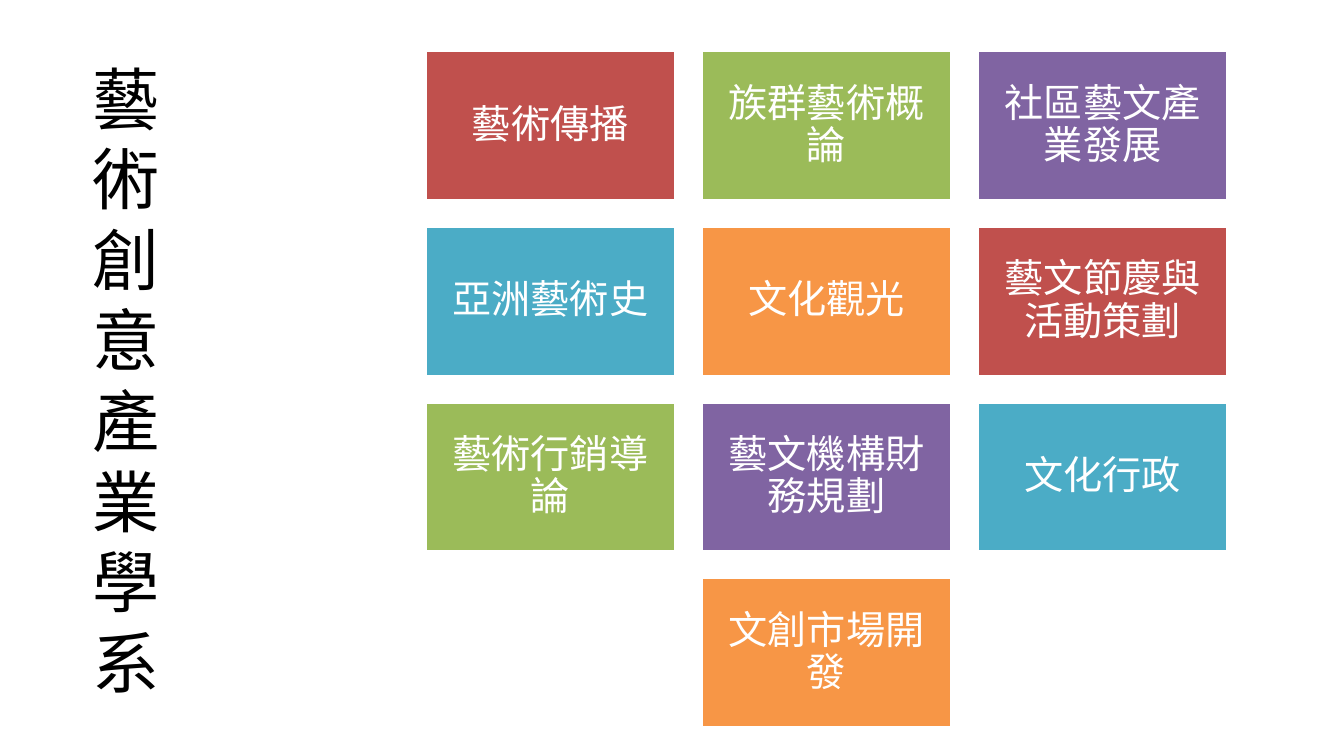
from pptx import Presentation
from pptx.dml.color import RGBColor
from pptx.enum.shapes import MSO_SHAPE
from pptx.enum.text import MSO_ANCHOR, PP_ALIGN
from pptx.util import Pt

COLORS = {
    "red": "C0504D",
    "green": "9BBB59",
    "purple": "8064A2",
    "teal": "4BACC6",
    "orange": "F79646",
    "white": "FFFFFF",
    "black": "000000",
}
TILE_COLORS = ["red", "green", "purple", "teal", "orange"]
DEPARTMENT = "藝術創意產業學系"
COURSES = [
    "藝術傳播", "族群藝術概論", "社區藝文產業發展",
    "亞洲藝術史", "文化觀光", "藝文節慶與活動策劃",
    "藝術行銷導論", "藝文機構財務規劃", "文化行政",
    "文創市場開發",
]
COLUMNS = 3


def rgb(name):
    return RGBColor.from_string(COLORS[name])


def write(frame, text, *, size, font, color, align=PP_ALIGN.LEFT,
          anchor=MSO_ANCHOR.TOP, spacing=1.0, inset_x=7.2, inset_y=3.6):
    frame.word_wrap = True
    frame.vertical_anchor = anchor
    frame.margin_left = frame.margin_right = Pt(inset_x)
    frame.margin_top = frame.margin_bottom = Pt(inset_y)
    para = frame.paragraphs[0]
    para.text = text
    para.alignment = align
    para.line_spacing = spacing
    for span in para.runs:
        span.font.size = Pt(size)
        span.font.name = font
        span.font.color.rgb = rgb(color)


def add_vertical_title(page, left, top, width, height):
    """Stack the department name, one character to a line."""
    box = page.shapes.add_textbox(Pt(left), Pt(top), Pt(width), Pt(height))
    write(box.text_frame, "\v".join(DEPARTMENT),
          size=36, font="TeX Gyre Bonum", color="black")


def add_tile(page, text, color, left, top, width, height):
    tile = page.shapes.add_shape(
        MSO_SHAPE.RECTANGLE, Pt(left), Pt(top), Pt(width), Pt(height))
    tile.shadow.inherit = False
    tile.fill.solid()
    tile.fill.fore_color.rgb = rgb(color)
    tile.line.color.rgb = rgb("white")
    tile.line.width = Pt(2)
    write(tile.text_frame, text, size=21, font="Calibri", color="white",
          align=PP_ALIGN.CENTER, anchor=MSO_ANCHOR.MIDDLE, spacing=0.9,
          inset_x=6.3, inset_y=6.3)


def add_course_grid(page, left, top, width):
    """Fill rows of tiles, centring a last row that is not full."""
    tile_width = width / (COLUMNS + 0.1 * (COLUMNS - 1))
    tile_height = 0.6 * tile_width
    gap = 0.1 * tile_width
    for index, course in enumerate(COURSES):
        row, column = divmod(index, COLUMNS)
        in_row = min(COLUMNS, len(COURSES) - row * COLUMNS)
        column += (COLUMNS - in_row) / 2
        add_tile(page, course, TILE_COLORS[index % len(TILE_COLORS)],
                 left + column * (tile_width + gap),
                 top + row * (tile_height + gap), tile_width, tile_height)


def main():
    deck = Presentation()
    deck.slide_width, deck.slide_height = Pt(720), Pt(405)
    page = deck.slides.add_slide(deck.slide_layouts[6])
    add_vertical_title(page, 42.5, 26.9, 67.7, 361.4)
    add_course_grid(page, 227.6, 26.9, 430.4)
    deck.save("out.pptx")


if __name__ == "__main__":
    main()
